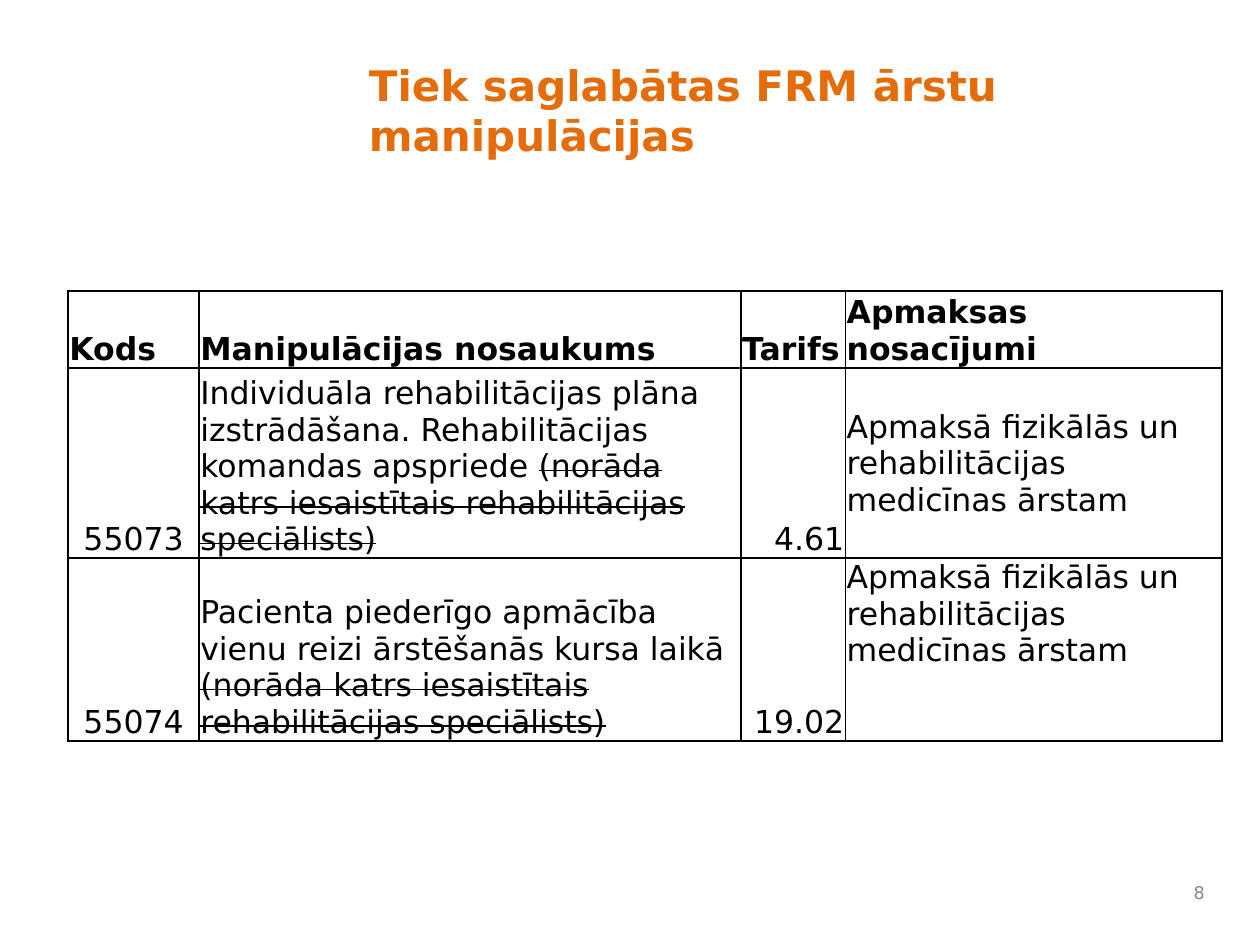
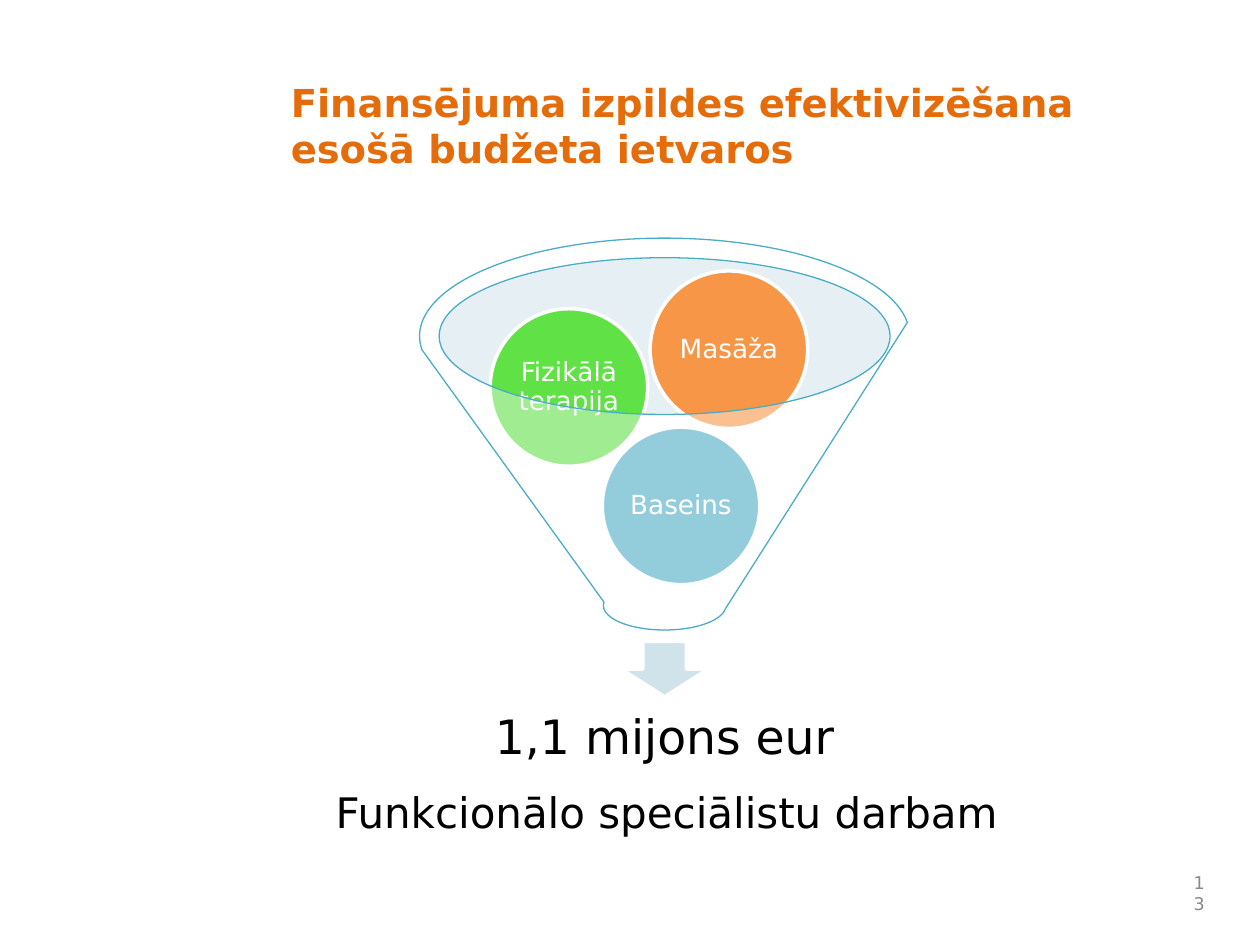
from typing import NamedTuple

from lxml import etree
from pptx import Presentation
from pptx.dml.color import RGBColor
from pptx.enum.shapes import MSO_SHAPE
from pptx.enum.text import MSO_ANCHOR, PP_ALIGN
from pptx.oxml.ns import qn
from pptx.util import Emu, Pt

PX = 9144  # one px is a hundredth of an inch
FONT = "DejaVu Sans"
COLORS = {
    "title": "E46C0A", "text": "000000", "page": "898989", "white": "FFFFFF",
    "mouth": "C1DBE5", "arrow": "D0E3EA", "outline": "4BACC6",
    "green": "60E146", "orange": "F79646",
}
LEFT, CENTER, RIGHT = PP_ALIGN.LEFT, PP_ALIGN.CENTER, PP_ALIGN.RIGHT
TOP, MIDDLE, BOTTOM = MSO_ANCHOR.TOP, MSO_ANCHOR.MIDDLE, MSO_ANCHOR.BOTTOM
ELLIPSE, ARROW, FUNNEL = MSO_SHAPE.OVAL, MSO_SHAPE.DOWN_ARROW, MSO_SHAPE.FUNNEL


class Box(NamedTuple):
    left: int
    top: int
    width: int
    height: int

    def emu(self) -> list[Emu]:
        return [px(length) for length in self]


class Style(NamedTuple):
    size: int
    color: str = "text"
    bold: bool = False
    align: PP_ALIGN = LEFT
    spacing: float = 1.0


class Cell(NamedTuple):
    text: str
    struck: str = ""
    align: PP_ALIGN = LEFT
    anchor: MSO_ANCHOR = BOTTOM
    bold: bool = False


class Ball(NamedTuple):
    label: str
    left: int
    top: int
    color: str


PAGE_BOX = Box(933, 692, 33, 33)
PAGE_STYLE = Style(10, "page", align=RIGHT)
BALL_SIZE = 125
BALL_STYLE = Style(15, "white", align=CENTER, spacing=0.9)

STRUCK = "(norāda katrs iesaistītais rehabilitācijas speciālists)"
CONDITION = "Apmaksā fizikālās un rehabilitācijas medicīnas ārstam"
HEADINGS = ["Kods", "Manipulācijas nosaukums", "Tarifs", "Apmaksas nosacījumi"]
COLUMN_WIDTHS = [104, 430, 83, 299]
ROW_HEIGHTS = [43, 145, 145]
TARIFF_ROWS = [
    [Cell(heading, bold=True) for heading in HEADINGS],
    [Cell("55073", align=CENTER),
     Cell("Individuāla rehabilitācijas plāna izstrādāšana. "
          "Rehabilitācijas komandas apspriede ", STRUCK),
     Cell("4.61", align=RIGHT), Cell(CONDITION, anchor=MIDDLE)],
    [Cell("55074", align=CENTER),
     Cell("Pacienta piederīgo apmācība vienu reizi ārstēšanās kursa laikā ", STRUCK),
     Cell("19.02", align=RIGHT), Cell(CONDITION, anchor=TOP)],
]
BALLS = [
    Ball("Baseins", 478, 339, "outline"),
    Ball("Fizikālā terapija", 389, 245, "green"),
    Ball("Masāža", 516, 215, "orange"),
]


def px(length: int) -> Emu:
    return Emu(length * PX)


def rgb(name: str) -> RGBColor:
    return RGBColor.from_string(COLORS[name])


def style_paragraph(paragraph, style: Style) -> None:
    paragraph.alignment = style.align
    paragraph.line_spacing = style.spacing
    font = paragraph.font
    font.name, font.size, font.bold = FONT, Pt(style.size), style.bold
    font.color.rgb = rgb(style.color)


def write(frame, text: str, style: Style, anchor: MSO_ANCHOR, inset: tuple[int, int]) -> None:
    frame.word_wrap = True
    frame.vertical_anchor = anchor
    frame.margin_left = frame.margin_right = px(inset[0])
    frame.margin_top = frame.margin_bottom = px(inset[1])
    paragraph = frame.paragraphs[0]
    paragraph.add_run().text = text
    style_paragraph(paragraph, style)


def add_text(slide, box: Box, text: str, style: Style,
             anchor: MSO_ANCHOR = TOP, inset: tuple[int, int] = (10, 5)) -> None:
    write(slide.shapes.add_textbox(*box.emu()).text_frame, text, style, anchor, inset)


def add_figure(slide, preset: MSO_SHAPE, box: Box, fill: str,
               line: str = "", weight: float = 2, alpha: int = 100):
    figure = slide.shapes.add_shape(preset, *box.emu())
    figure.shadow.inherit = False
    figure.fill.solid()
    figure.fill.fore_color.rgb = rgb(fill)
    if alpha < 100:
        color = figure._element.spPr.find(qn("a:solidFill"))[0]
        etree.SubElement(color, qn("a:alpha"), val=str(alpha * 1000))
    if line:
        figure.line.color.rgb = rgb(line)
        figure.line.width = Pt(weight)
    else:
        figure.line.fill.background()
    return figure


def add_borders(cell) -> None:
    properties = cell._tc.get_or_add_tcPr()
    for index, side in enumerate(("a:lnL", "a:lnR", "a:lnT", "a:lnB")):
        border = etree.Element(qn(side), w=str(Pt(1)))
        fill = etree.SubElement(border, qn("a:solidFill"))
        etree.SubElement(fill, qn("a:srgbClr"), val=COLORS["text"])
        properties.insert(index, border)


def fill_cell(cell, content: Cell) -> None:
    cell.fill.solid()
    cell.fill.fore_color.rgb = rgb("white")
    add_borders(cell)
    cell.margin_left = cell.margin_right = cell.margin_top = px(1)
    cell.margin_bottom = 0
    cell.vertical_anchor = content.anchor
    paragraph = cell.text_frame.paragraphs[0]
    paragraph.add_run().text = content.text
    if content.struck:
        struck = paragraph.add_run()
        struck.text = content.struck
        struck._r.get_or_add_rPr().set("strike", "sngStrike")
    style_paragraph(paragraph, Style(18, bold=content.bold, align=content.align))


def add_slide(deck, title: str, title_box: Box, title_size: int, page: str):
    slide = deck.slides.add_slide(deck.slide_layouts[6])
    add_text(slide, title_box, title, Style(title_size, "title", bold=True))
    add_text(slide, PAGE_BOX, page, PAGE_STYLE, MIDDLE)
    return slide


def build_tariffs(deck) -> None:
    slide = add_slide(deck, "Tiek saglabātas FRM ārstu manipulācijas",
                      Box(283, 42, 667, 113), 24, "8")
    box = Box(54, 231, sum(COLUMN_WIDTHS), sum(ROW_HEIGHTS))
    tariffs = slide.shapes.add_table(len(ROW_HEIGHTS), len(COLUMN_WIDTHS), *box.emu()).table
    tariffs.first_row = tariffs.horz_banding = False
    for column, width in zip(tariffs.columns, COLUMN_WIDTHS):
        column.width = px(width)
    for row, height, contents in zip(tariffs.rows, ROW_HEIGHTS, TARIFF_ROWS):
        row.height = px(height)
        for cell, content in zip(row.cells, contents):
            fill_cell(cell, content)


def build_funding(deck) -> None:
    slide = add_slide(deck, "Finansējuma izpildes efektivizēšana esošā budžeta ietvaros",
                      Box(221, 58, 712, 128), 22, "13")
    add_text(slide, Box(252, 619, 550, 72), "Funkcionālo speciālistu darbam",
             Style(24, align=RIGHT))

    # Funnel mouth, outlet arrow and result
    add_figure(slide, ELLIPSE, Box(348, 205, 358, 124), "mouth", alpha=40)
    add_figure(slide, ARROW, Box(493, 509, 69, 44), "arrow", "white")
    add_text(slide, Box(361, 545, 333, 83), "1,1 mijons eur",
             Style(27, align=CENTER, spacing=0.9), MIDDLE, (21, 21))

    # Balls, with the translucent funnel in front
    for ball in BALLS:
        box = Box(ball.left, ball.top, BALL_SIZE, BALL_SIZE)
        figure = add_figure(slide, ELLIPSE, box, ball.color, "white")
        write(figure.text_frame, ball.label, BALL_STYLE, MIDDLE, (2, 2))
    add_figure(slide, FUNNEL, Box(333, 189, 389, 311), "white", "outline", 0.75, alpha=40)


def main() -> None:
    deck = Presentation()
    deck.slide_width, deck.slide_height = px(1000), px(750)
    build_tariffs(deck)
    build_funding(deck)
    deck.save("out.pptx")


if __name__ == "__main__":
    main()
